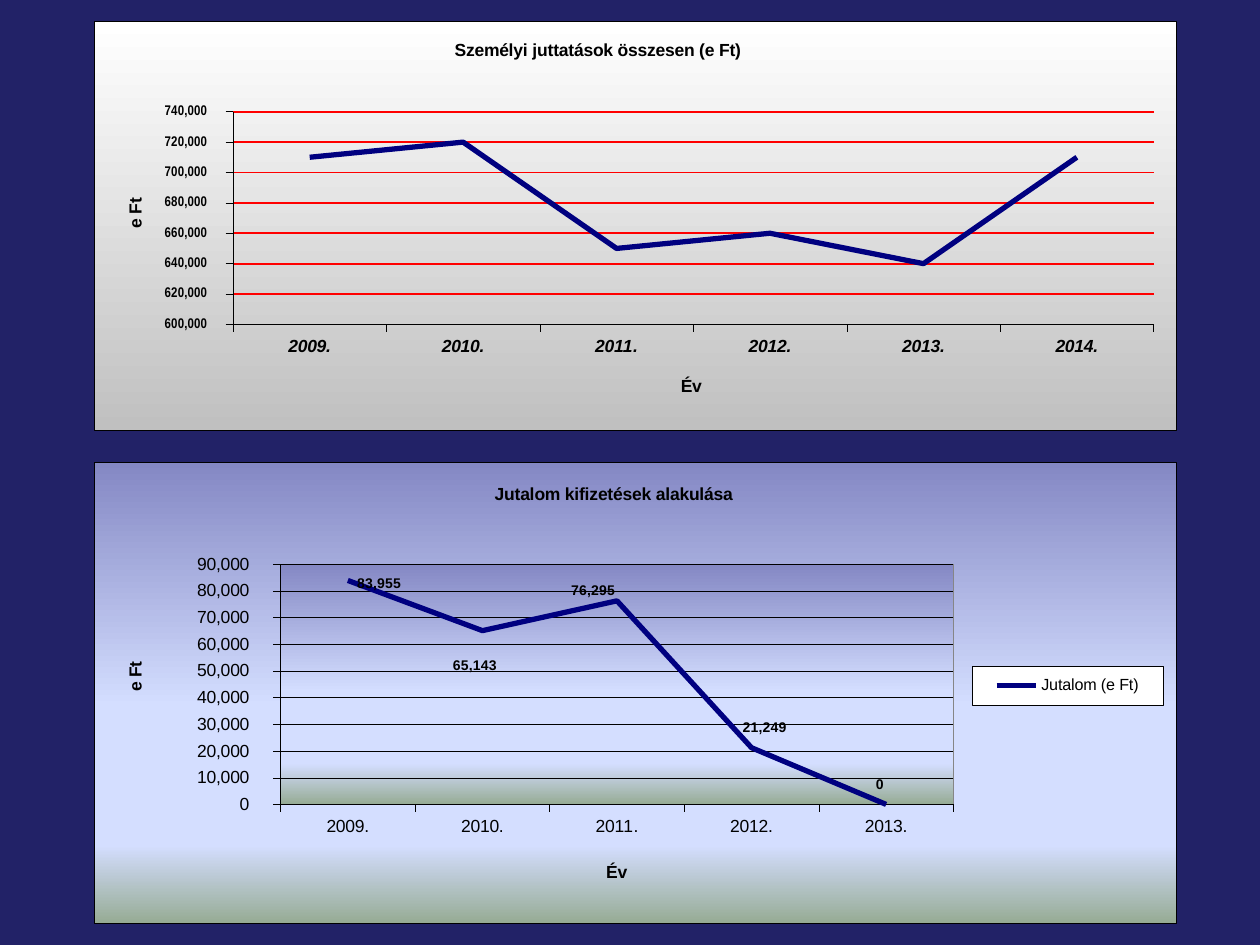
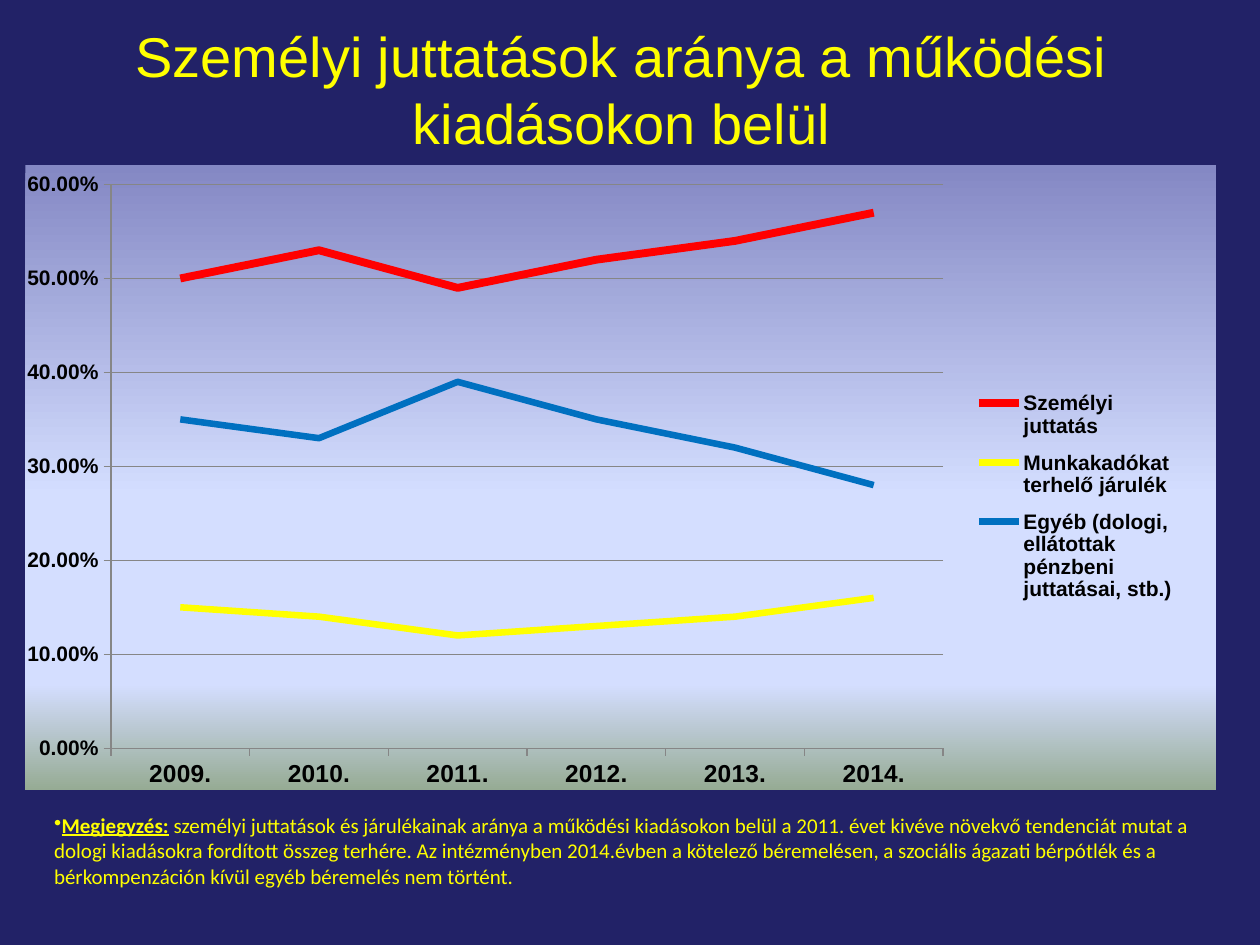
from dataclasses import dataclass
from typing import Optional

from pptx import Presentation
from pptx.chart.data import CategoryChartData
from pptx.dml.color import RGBColor
from pptx.enum.chart import XL_CHART_TYPE as ChartType
from pptx.enum.chart import XL_LABEL_POSITION as LabelPos
from pptx.enum.chart import XL_LEGEND_POSITION as LegendPos
from pptx.enum.chart import XL_TICK_MARK as Tick
from pptx.enum.text import MSO_ANCHOR as Anchor
from pptx.enum.text import PP_ALIGN as Align
from pptx.oxml import parse_xml
from pptx.oxml.ns import nsdecls, qn
from pptx.util import Cm, Pt

NAVY = RGBColor(0x22, 0x22, 0x67)
BLACK = RGBColor(0x00, 0x00, 0x00)
WHITE = RGBColor(0xFF, 0xFF, 0xFF)
SILVER = RGBColor(0xC0, 0xC0, 0xC0)
GRAY = RGBColor(0x86, 0x86, 0x86)
YELLOW = RGBColor(0xFF, 0xFF, 0x00)
RED = RGBColor(0xFF, 0x00, 0x00)
BLUE = RGBColor(0x00, 0x70, 0xC0)
DARK_BLUE = RGBColor(0x00, 0x00, 0x80)
DUSK = RGBColor(0x84, 0x88, 0xC4)
SKY = RGBColor(0xD4, 0xDE, 0xFF)
MOSS = RGBColor(0x96, 0xAB, 0x94)

SILVER_FADE = ((0, WHITE), (100, SILVER))
HORIZON = ((0, DUSK), (53, SKY), (83, SKY), (100, MOSS))
YEARS = ("2009.", "2010.", "2011.", "2012.", "2013.", "2014.")
FORINT = "#,##0\\ _F_t"
NO_STYLE = "{2D5ABB26-0587-4C30-8999-92F81FD0307C}"
NO_LEADERS = (
    f'<c:extLst {nsdecls("c")}><c:ext uri="{{CE6537A1-D6FC-4f65-9D91-7224C49458BB}}" '
    'xmlns:c15="http://schemas.microsoft.com/office/drawing/2012/chart">'
    '<c15:showLeaderLines val="0"/></c:ext></c:extLst>')


@dataclass(frozen=True)
class Line:
    name: str
    values: tuple
    color: RGBColor
    width: float


@dataclass(frozen=True)
class Text:
    size: float
    bold: bool = False
    italic: bool = False
    name: str = "Arial"
    color: RGBColor = BLACK


@dataclass(frozen=True)
class Caption:
    text: str
    at: tuple
    rotated: bool = False


@dataclass(frozen=True)
class LineChart:
    box: tuple
    plot: tuple
    lines: tuple
    scale: tuple
    number_format: str
    fade: tuple
    cat_text: Text
    val_text: Text
    grid: tuple
    axis: tuple = (BLACK, 0.25)
    border: Optional[RGBColor] = BLACK
    plot_fade: Optional[tuple] = None
    title: Optional[Caption] = None
    cat_title: Optional[Caption] = None
    val_title: Optional[Caption] = None
    legend: Optional[tuple] = None
    legend_text: Optional[Text] = None
    legend_boxed: bool = False
    label_shifts: tuple = ()


ALLOWANCES = LineChart(
    box=(1.9, 0.43, 21.82, 8.24),
    plot=(0.128, 0.221, 0.851, 0.521),
    lines=(Line("Személyi juttatások összesen (e Ft)",
                (710000, 720000, 650000, 660000, 640000, 710000), DARK_BLUE, 3),),
    scale=(600000, 740000, 20000),
    number_format=FORINT,
    fade=SILVER_FADE,
    cat_text=Text(10, bold=True, italic=True),
    val_text=Text(8, bold=True, name="Arial Narrow"),
    grid=(RED, 1),
    title=Caption("Személyi juttatások összesen (e Ft)", (0.33, 0.035)),
    cat_title=Caption("Év", (0.539, 0.857)),
    val_title=Caption("e Ft", (0.024, 0.425), rotated=True),
)

BONUSES = LineChart(
    box=(1.9, 9.32, 21.82, 9.3),
    plot=(0.172, 0.221, 0.622, 0.521),
    lines=(Line("Jutalom (e Ft)", (83955, 65143, 76295, 21249, 0), DARK_BLUE, 3),),
    scale=(0, 90000, 10000),
    number_format=FORINT,
    fade=HORIZON,
    plot_fade=HORIZON,
    cat_text=Text(10),
    val_text=Text(10),
    grid=(BLACK, 0.25),
    title=Caption("Jutalom kifizetések alakulása", (0.367, 0.037)),
    cat_title=Caption("Év", (0.47, 0.857)),
    val_title=Caption("e Ft", (0.024, 0.425), rotated=True),
    legend=(0.811, 0.442, 0.177, 0.084),
    legend_text=Text(9.2),
    legend_boxed=True,
    label_shifts=((0.004, 0.006), (-0.032, 0.076), (-0.047, -0.024),
                  (-0.013, -0.045), (-0.014, -0.044)),
)

SHARES = LineChart(
    box=(0.51, 3.33, 24, 12.6),
    plot=(0.072, 0.031, 0.699, 0.902),
    lines=(
        Line("Személyi juttatás",
             (0.5, 0.53, 0.49, 0.52, 0.54, 0.57), RED, 4.5),
        Line("Munkakadókat terhelő járulék",
             (0.15, 0.14, 0.12, 0.13, 0.14, 0.16), YELLOW, 3.75),
        Line("Egyéb (dologi, ellátottak pénzbeni juttatásai, stb.)",
             (0.35, 0.33, 0.39, 0.35, 0.32, 0.28), BLUE, 3.75),
    ),
    scale=(0, 0.6, 0.1),
    number_format="0.00%",
    fade=HORIZON,
    border=None,
    cat_text=Text(14, bold=True),
    val_text=Text(12, bold=True),
    grid=(GRAY, 0.75),
    axis=(GRAY, 0.75),
    legend=(0.797, 0.34, 0.17, 0.38),
    legend_text=Text(12, bold=True),
)


def set_font(font, text: Text) -> None:
    font.size = Pt(text.size)
    font.bold = text.bold
    font.italic = text.italic
    font.name = text.name
    font.color.rgb = text.color


def set_line(line, color: RGBColor, width: float) -> None:
    line.color.rgb = color
    line.width = Pt(width)


def gradient_props(stops: tuple, border: Optional[RGBColor]):
    gs = "".join(f'<a:gs pos="{pos * 1000}"><a:srgbClr val="{color}"/></a:gs>'
                 for pos, color in stops)
    edge = f'<a:solidFill><a:srgbClr val="{border}"/></a:solidFill>' if border else "<a:noFill/>"
    return parse_xml(
        f'<c:spPr {nsdecls("c", "a")}><a:gradFill rotWithShape="0"><a:gsLst>{gs}</a:gsLst>'
        f'<a:lin ang="5400000" scaled="0"/></a:gradFill><a:ln w="3175">{edge}</a:ln></c:spPr>')


def place(element, numbers: tuple, index: int = 1, inner: bool = False,
          shift: bool = False) -> None:
    for old in element.findall(qn("c:layout")):
        element.remove(old)
    target = '<c:layoutTarget val="inner"/>' if inner else ""
    modes = "" if shift else '<c:xMode val="edge"/><c:yMode val="edge"/>'
    values = "".join(f'<c:{key} val="{value}"/>' for key, value in zip("xywh", numbers))
    element.insert(index, parse_xml(
        f'<c:layout {nsdecls("c")}><c:manualLayout>{target}{modes}{values}'
        f'</c:manualLayout></c:layout>'))


def write_caption(title, caption: Caption) -> None:
    tf = title.text_frame
    tf.text = caption.text
    set_font(tf.paragraphs[0].font, Text(10, bold=True))
    if caption.rotated:
        tf._txBody.bodyPr.set("rot", "-5400000")
        tf._txBody.bodyPr.set("vert", "horz")
    place(title._element, caption.at)


def format_axis(axis, text: Text, line: tuple, caption: Optional[Caption]) -> None:
    axis.major_tick_mark = Tick.OUTSIDE
    axis.minor_tick_mark = Tick.NONE
    set_font(axis.tick_labels.font, text)
    set_line(axis.format.line, *line)
    axis.has_title = caption is not None
    if caption:
        write_caption(axis.axis_title, caption)


def add_labels(series, shifts: tuple) -> None:
    text = Text(8, bold=True)
    labels = series.data_labels
    labels.show_value = True
    labels.number_format = FORINT
    labels.number_format_is_linked = False
    set_font(labels.font, text)
    for i in range(len(shifts)):
        label = series.points[i].data_label
        set_font(label.font, text)
        label.position = LabelPos.RIGHT
    for element, shift in zip(series._element.iter(qn("c:dLbl")), shifts):
        place(element, shift, shift=True)
    for leader in labels._element.findall(qn("c:showLeaderLines")):
        leader.set("val", "0")
    labels._element.append(parse_xml(NO_LEADERS))


def add_legend(chart, item: LineChart) -> None:
    legend = chart.legend
    legend.position = LegendPos.RIGHT
    legend.include_in_layout = False
    set_font(legend.font, item.legend_text)
    place(legend._element, item.legend)
    if item.legend_boxed:
        legend._element.find(qn("c:overlay")).addnext(
            gradient_props(((0, WHITE), (100, WHITE)), BLACK))


def add_line_chart(slide, item: LineChart) -> None:
    data = CategoryChartData(number_format=item.number_format)
    data.categories = YEARS[:len(item.lines[0].values)]
    for line in item.lines:
        data.add_series(line.name, line.values)
    chart = slide.shapes.add_chart(ChartType.LINE, *map(Cm, item.box), data).chart
    set_font(chart.font, Text(10))

    chart.has_title = item.title is not None
    if item.title:
        write_caption(chart.chart_title, item.title)
        chart.chart_title.include_in_layout = False
    chart.has_legend = item.legend is not None
    if item.legend:
        add_legend(chart, item)

    format_axis(chart.category_axis, item.cat_text, item.axis, item.cat_title)
    axis = chart.value_axis
    format_axis(axis, item.val_text, item.axis, item.val_title)
    axis.minimum_scale, axis.maximum_scale, axis.major_unit = item.scale
    axis.tick_labels.number_format = item.number_format
    axis.tick_labels.number_format_is_linked = False
    axis.has_major_gridlines = True
    set_line(axis.major_gridlines.format.line, *item.grid)

    plot = chart.plots[0]
    plot.vary_by_categories = False
    for series, line in zip(plot.series, item.lines):
        series.smooth = False
        set_line(series.format.line, line.color, line.width)
        if item.label_shifts:
            add_labels(series, item.label_shifts)

    chart_el = chart._chartSpace.find(qn("c:chart"))
    chart_el.addnext(gradient_props(item.fade, item.border))
    plot_area = chart_el.find(qn("c:plotArea"))
    place(plot_area, item.plot, index=0, inner=True)
    if item.plot_fade:
        plot_area.append(gradient_props(item.plot_fade, GRAY))


def add_note(slide, heading: str, body: str) -> None:
    table = slide.shapes.add_table(1, 1, Cm(1.09), Cm(15.93), Cm(23.6), Cm(2.01)).table
    table.first_row = table.horz_banding = False
    table._tbl.tblPr.find(qn("a:tableStyleId")).text = NO_STYLE
    cell = table.cell(0, 0)
    cell.fill.background()
    cell.vertical_anchor = Anchor.BOTTOM
    cell.margin_left = cell.margin_right = cell.margin_top = cell.margin_bottom = 0
    p = cell.text_frame.paragraphs[0]
    p.line_spacing = 1.0
    p.space_before = Pt(2.4)
    p._p.get_or_add_pPr().append(parse_xml(f'<a:buChar {nsdecls("a")} char="•"/>'))
    for text, strong in ((heading, True), (body, False)):
        r = p.add_run()
        r.text = text
        set_font(r.font, Text(12, bold=strong, name="Calibri", color=YELLOW))
        r.font.underline = strong


def set_title(slide, text: str) -> None:
    sp = slide.shapes.title
    sp.left, sp.top, sp.width, sp.height = map(Cm, (1.1, 0.53, 22.86, 2.51))
    tf = sp.text_frame
    tf.text = text
    tf.vertical_anchor = Anchor.MIDDLE
    p = tf.paragraphs[0]
    p.alignment = Align.CENTER
    set_font(p.font, Text(32, color=YELLOW))


def main() -> None:
    prs = Presentation()
    prs.slide_width, prs.slide_height = Cm(25.4), Cm(19.05)
    fill = prs.slide_master.background.fill
    fill.solid()
    fill.fore_color.rgb = NAVY

    s = prs.slides.add_slide(prs.slide_layouts[6])
    add_line_chart(s, ALLOWANCES)
    add_line_chart(s, BONUSES)

    s = prs.slides.add_slide(prs.slide_layouts[5])
    set_title(s, "Személyi juttatások aránya a működési kiadásokon belül")
    add_note(s, "Megjegyzés:",
             " személyi juttatások és járulékainak aránya a működési kiadásokon belül a 2011. "
             "évet kivéve növekvő tendenciát mutat a dologi kiadásokra fordított összeg terhére. "
             "Az intézményben 2014.évben a kötelező béremelésen, a szociális ágazati bérpótlék "
             "és a bérkompenzáción kívül egyéb béremelés nem történt.")
    add_line_chart(s, SHARES)
    prs.save("out.pptx")


if __name__ == "__main__":
    main()
